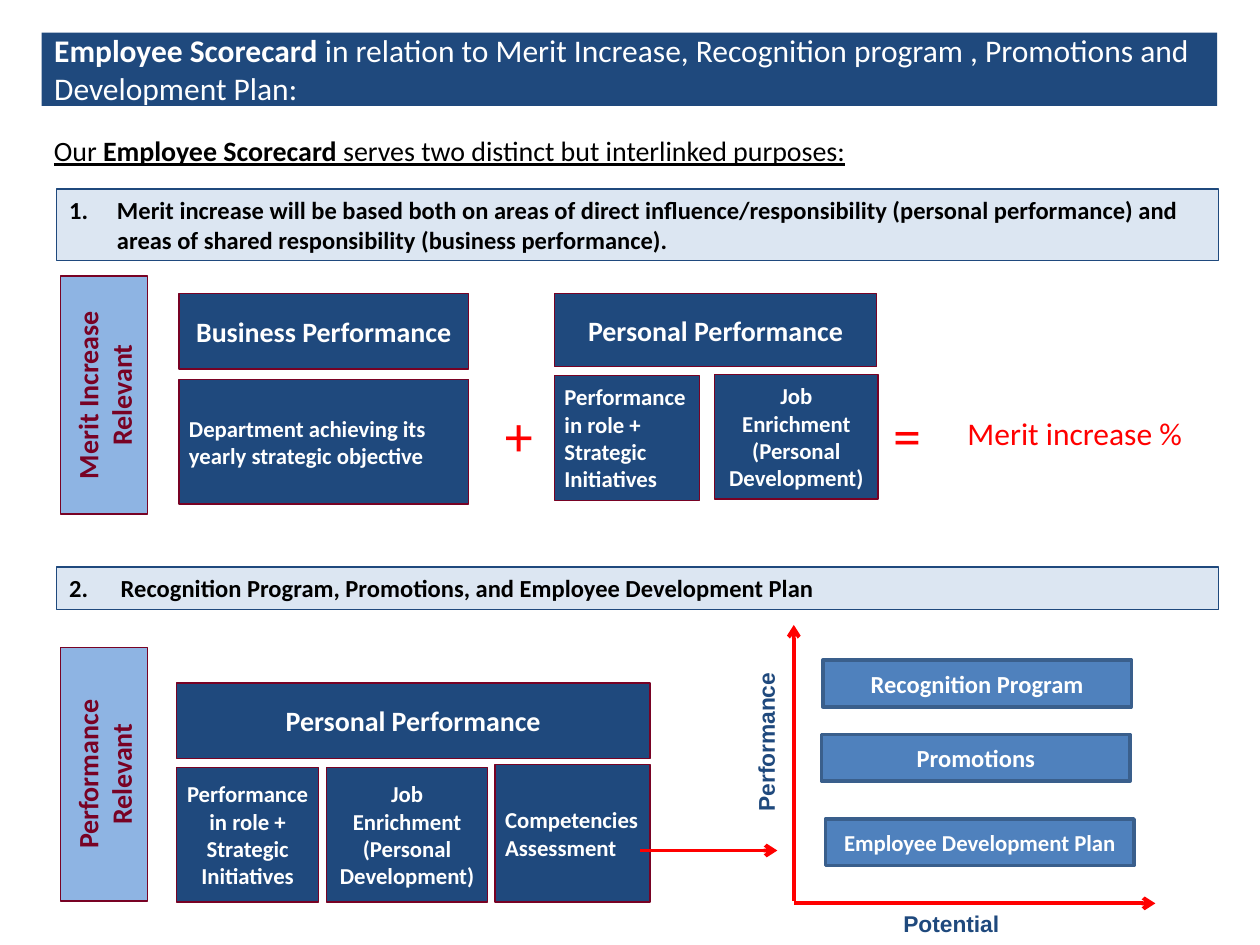
from dataclasses import dataclass

from lxml import etree
from pptx import Presentation
from pptx.dml.color import RGBColor
from pptx.enum.shapes import MSO_CONNECTOR, MSO_SHAPE
from pptx.enum.text import MSO_ANCHOR, MSO_AUTO_SIZE, PP_ALIGN
from pptx.oxml.ns import qn
from pptx.util import Inches, Pt

LEFT, CENTER = PP_ALIGN.LEFT, PP_ALIGN.CENTER
TOP, MIDDLE = MSO_ANCHOR.TOP, MSO_ANCHOR.MIDDLE
NO_AUTOFIT = MSO_AUTO_SIZE.NONE
RECTANGLE = MSO_SHAPE.RECTANGLE
STRAIGHT = MSO_CONNECTOR.STRAIGHT


@dataclass(frozen=True)
class Theme:
    navy: str = "1F497D"
    maroon: str = "780224"
    pale: str = "DCE6F2"
    sky: str = "8EB4E3"
    blue: str = "4F81BD"
    steel: str = "3A5F8C"
    red: str = "FF0000"
    white: str = "FFFFFF"
    black: str = "000000"
    body_font: str = "Calibri"
    axis_font: str = "Arial"
    symbol_size: int = 32
    title_size: int = 18
    heading_size: int = 16
    banner_size: int = 14
    detail_size: int = 13
    thin: float = 0.75
    medium: float = 2
    thick: float = 2.25


class SlideBuilder:
    def __init__(self, slide, theme):
        self.slide = slide
        self.theme = theme

    def add_text(self, shape, runs, size, color, align=LEFT, anchor=TOP,
                 font=None, inset=None, wrap=True, underline=False):
        frame = shape.text_frame
        frame.auto_size = NO_AUTOFIT
        frame.word_wrap = wrap
        frame.vertical_anchor = anchor
        if inset is not None:
            frame.margin_left = frame.margin_right = Inches(inset)
            frame.margin_top = frame.margin_bottom = Inches(inset)
        paragraph = frame.paragraphs[0]
        paragraph.alignment = align
        for text, bold in runs:
            run = paragraph.add_run()
            run.text = text
            run.font.name = font or self.theme.body_font
            run.font.size = Pt(size)
            run.font.bold = bold
            run.font.underline = underline
            run.font.color.rgb = RGBColor.from_string(color)
        return paragraph

    def title(self, box, runs):
        shape = self.slide.shapes.title
        shape.left, shape.top, shape.width, shape.height = map(Inches, box)
        shape.fill.solid()
        shape.fill.fore_color.rgb = RGBColor.from_string(self.theme.navy)
        self.add_text(shape, runs, self.theme.title_size, self.theme.white, anchor=MIDDLE)

    def box(self, box, fill, line, line_width):
        shape = self.slide.shapes.add_shape(RECTANGLE, *map(Inches, box))
        shape.shadow.inherit = False
        shape.fill.solid()
        shape.fill.fore_color.rgb = RGBColor.from_string(fill)
        shape.line.color.rgb = RGBColor.from_string(line)
        shape.line.width = Pt(line_width)
        return shape

    def panel(self, box, text, size, align=CENTER):
        shape = self.box(box, self.theme.navy, self.theme.maroon, self.theme.thin)
        self.add_text(shape, [(text, True)], size, self.theme.white, align, MIDDLE, inset=0.08)

    def side_label(self, box, text):
        shape = self.box(box, self.theme.sky, self.theme.maroon, self.theme.thin)
        shape.rotation = 270
        self.add_text(shape, [(text, True)], self.theme.heading_size, self.theme.maroon,
                      CENTER, MIDDLE, inset=0.08)

    def banner(self, top, height, text, indent, number=None):
        shape = self.box((0.45, top, 9.22, height), self.theme.pale, self.theme.navy,
                         self.theme.thin)
        paragraph = self.add_text(shape, [(text, True)], self.theme.banner_size,
                                  self.theme.black)
        properties = paragraph._p.get_or_add_pPr()
        properties.set("marL", str(Inches(indent)))
        properties.set("indent", str(-Inches(indent)))
        if number:
            etree.SubElement(properties, qn("a:buFont"), typeface="+mj-lt")
            etree.SubElement(properties, qn("a:buAutoNum"), type="arabicPeriod",
                             startAt=str(number))

    def outcome(self, left, top, text, size):
        shape = self.box((left, top, 2.45, 0.37), self.theme.blue, self.theme.steel,
                         self.theme.medium)
        self.add_text(shape, [(text, True)], size, self.theme.white, CENTER, MIDDLE)

    def label(self, box, runs, size, color, rotation=0, **style):
        shape = self.slide.shapes.add_textbox(*map(Inches, box))
        shape.rotation = rotation
        self.add_text(shape, runs, size, color, **style)

    def arrow(self, start, end):
        connector = self.slide.shapes.add_connector(STRAIGHT, *map(Inches, start + end))
        connector.line.color.rgb = RGBColor.from_string(self.theme.red)
        connector.line.width = Pt(self.theme.thick)
        etree.SubElement(connector.get_or_add_ln(), qn("a:tailEnd"), type="arrow")
        etree.SubElement(connector._element.spPr, qn("a:effectLst"))


def main():
    theme = Theme()
    presentation = Presentation()
    presentation.slide_width = Inches(10)
    presentation.slide_height = Inches(7.5)
    slide = presentation.slides.add_slide(presentation.slide_layouts[5])
    builder = SlideBuilder(slide, theme)

    builder.title((0.33, 0.26, 9.33, 0.58), [
        ("Employee Scorecard ", True),
        ("in relation to Merit Increase, Recognition program , Promotions and "
         "Development Plan:", False),
    ])
    builder.label((0.33, 1.01, 9.33, 0.37), [
        ("Our ", False),
        ("Employee Scorecard ", True),
        ("serves two distinct but interlinked purposes:", False),
    ], theme.heading_size, theme.black, underline=True)

    builder.banner(1.5, 0.57, "Merit increase will be based both on areas of direct "
                   "influence/responsibility (personal performance) and areas of shared "
                   "responsibility (business performance).", 0.38, number=1)
    builder.banner(4.5, 0.34, "2.\tRecognition Program, Promotions, and Employee "
                   "Development Plan", 0.41)

    builder.side_label((-0.12, 2.79, 1.89, 0.69), "Merit Increase Relevant")
    builder.side_label((-0.18, 5.8, 2.01, 0.69), "Performance Relevant")

    for box, text in (
        ((1.42, 2.33, 2.3, 0.6), "Business Performance"),
        ((4.4, 2.33, 2.56, 0.58), "Personal Performance"),
        ((1.4, 5.42, 3.76, 0.6), "Personal Performance"),
    ):
        builder.panel(box, text, theme.heading_size)

    role = "Performance in role + Strategic Initiatives"
    job = "Job Enrichment (Personal Development)"
    for box, text, align in (
        ((1.42, 3.01, 2.3, 0.99), "Department achieving its yearly strategic objective", LEFT),
        ((4.4, 2.98, 1.15, 0.99), role, LEFT),
        ((5.67, 2.97, 1.3, 0.99), job, CENTER),
        ((1.4, 6.09, 1.13, 1.07), role, CENTER),
        ((2.59, 6.09, 1.28, 1.07), job, CENTER),
        ((3.93, 6.07, 1.23, 1.09), "Competencies Assessment", LEFT),
    ):
        builder.panel(box, text, theme.detail_size, align)

    for left, symbol in ((3.91, "+"), (6.99, "=")):
        builder.label((left, 3.13, 0.43, 0.64), [(symbol, False)], theme.symbol_size,
                      theme.red, wrap=False)
    builder.label((7.58, 3.24, 1.92, 0.4), [("Merit increase %", False)],
                  theme.title_size, theme.red)

    for start, end in (
        ((5.08, 6.75), (6.17, 6.75)),
        ((6.3, 7.15), (6.3, 4.96)),
        ((6.3, 7.17), (9.17, 7.17)),
    ):
        builder.arrow(start, end)
    for box, text, rotation in (
        ((5.1, 5.73, 1.96, 0.32), "Performance", 270),
        ((6.26, 7.17, 2.58, 0.32), "Potential", 0),
    ):
        builder.label(box, [(text, True)], theme.detail_size, theme.navy, rotation,
                      align=CENTER, font=theme.axis_font)

    builder.outcome(6.53, 5.24, "Recognition Program", theme.banner_size)
    builder.outcome(6.52, 5.83, "Promotions", theme.banner_size)
    builder.outcome(6.55, 6.5, "Employee Development Plan", theme.detail_size)

    presentation.save("out.pptx")


if __name__ == "__main__":
    main()
